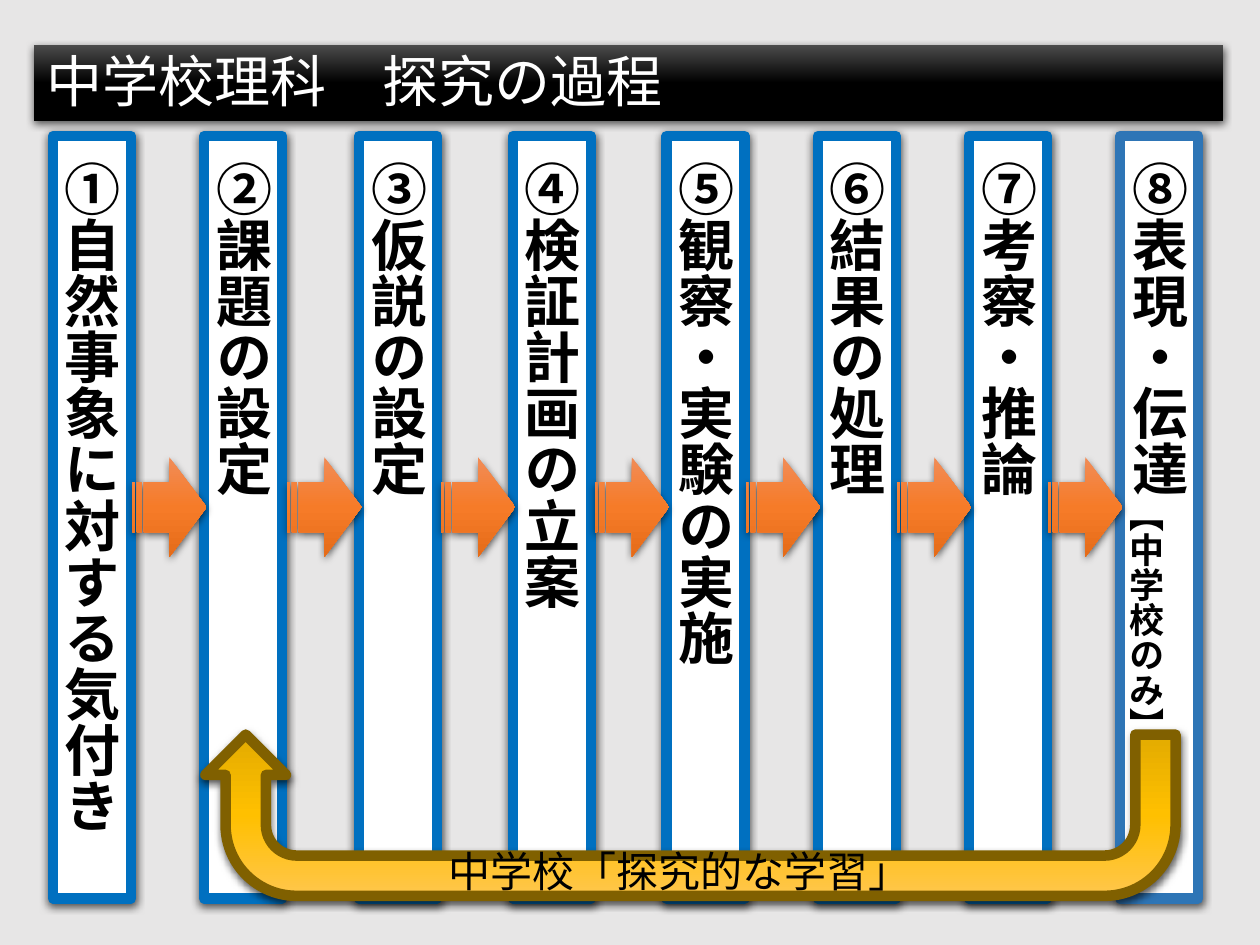
from lxml import etree
from pptx import Presentation
from pptx.dml.color import RGBColor
from pptx.enum.shapes import MSO_SHAPE as Shape
from pptx.enum.text import MSO_ANCHOR as Anchor, MSO_AUTO_SIZE as AutoSize, PP_ALIGN as Align
from pptx.oxml import parse_xml
from pptx.oxml.ns import nsdecls, qn
from pptx.util import Inches, Pt

FONT = "Noto Sans CJK JP"
COLORS = {
    "background": "E7E6E6", "white": "FFFFFF", "black": "000000",
    "border": "0070C0", "last_border": "2E75B6", "loop_border": "806000",
}
TITLE_GRADIENT = ("4B4B4B", "000000", "000000")
ARROW_GRADIENT = ("F18C57", "F67B28", "E56C19")
LOOP_GRADIENT = ("FFC64B", "FFC000", "E3AB00")


def add_run(paragraph, text, size, color="black", bold=False):
    """Add text in the slide's font, for Latin and East Asian letters."""
    run = paragraph.add_run()
    run.text = text
    run.font.name = FONT
    run.font.size = Pt(size)
    run.font.bold = bold
    run.font.color.rgb = RGBColor.from_string(COLORS[color])
    latin = run.font._element.find(qn("a:latin"))
    east_asian = etree.Element(qn("a:ea"), typeface=FONT)
    latin.addnext(east_asian)


def decorate(shape, gradient=None, border=None):
    """Give a shape its fill, border and soft shadow."""
    shape.fill.solid()
    shape.fill.fore_color.rgb = RGBColor.from_string(COLORS["white"])
    if border:
        shape.line.color.rgb = RGBColor.from_string(COLORS[border])
        shape.line.width = Pt(6)
    else:
        shape.line.fill.background()
    properties = shape._element.spPr
    if gradient:
        stops = "".join(
            f'<a:gs pos="{i * 50000}"><a:srgbClr val="{color}"/></a:gs>'
            for i, color in enumerate(gradient))
        solid = properties.find(qn("a:solidFill"))
        properties.replace(solid, parse_xml(
            f'<a:gradFill {nsdecls("a")} rotWithShape="1"><a:gsLst>{stops}</a:gsLst>'
            '<a:lin ang="5400000" scaled="0"/></a:gradFill>'))
    properties.append(parse_xml(
        f'<a:effectLst {nsdecls("a")}><a:outerShdw blurRad="{Pt(4.5)}" dist="{Pt(1.5)}" '
        'dir="5400000" algn="ctr" rotWithShape="0"><a:srgbClr val="000000">'
        '<a:alpha val="63000"/></a:srgbClr></a:outerShdw></a:effectLst>'))


prs = Presentation()
prs.slide_width, prs.slide_height = Inches(10), Inches(7.5)
slide = prs.slides.add_slide(prs.slide_layouts[5])
slide.background.fill.solid()
slide.background.fill.fore_color.rgb = RGBColor.from_string(COLORS["background"])

# Title bar
title = slide.shapes.title
title.left, title.top, title.width, title.height = map(Inches, (0.27, 0.36, 9.44, 0.6))
decorate(title, TITLE_GRADIENT)
title.text_frame.vertical_anchor = Anchor.BOTTOM
title.text_frame.auto_size = AutoSize.NONE
heading = title.text_frame.paragraphs[0]
heading.alignment = Align.LEFT
heading.line_spacing = 0.9
add_run(heading, "中学校理科　探究の過程", 32, "white")

# Steps of the inquiry: left edge, label, smaller remark
steps = [
    (0.42, "①自然事象に対する気付き", ""),
    (1.62, "②課題の設定", ""),
    (2.85, "③仮説の設定", ""),
    (4.07, "④検証計画の立案", ""),
    (5.29, "⑤観察・実験の実施", ""),
    (6.49, "⑥結果の処理", ""),
    (7.69, "⑦考察・推論", ""),
    (8.89, "⑧表現・伝達", "【中学校のみ】"),
]
for left, label, remark in steps:
    step = slide.shapes.add_shape(
        Shape.RECTANGLE, Inches(left), Inches(1.08), Inches(0.62), Inches(6.05))
    decorate(step, border="last_border" if remark else "border")
    frame = step.text_frame
    frame.margin_left, frame.margin_right = 0, Inches(0.08)
    frame.margin_top = frame.margin_bottom = Inches(0.05)
    frame.vertical_anchor = Anchor.TOP
    frame.word_wrap = True
    frame.auto_size = AutoSize.SHAPE_TO_FIT_TEXT
    frame._txBody.bodyPr.set("vert", "eaVert")
    paragraph = frame.paragraphs[0]
    paragraph.alignment = Align.LEFT
    add_run(paragraph, " " + label, 32, bold=True)
    if remark:
        add_run(paragraph, remark, 20, bold=True)

# Arrows leading into each following step
for left, _, _ in steps[1:]:
    arrow = slide.shapes.add_shape(
        Shape.STRIPED_RIGHT_ARROW, Inches(left - 0.57), Inches(3.63), Inches(0.59), Inches(0.79))
    decorate(arrow, ARROW_GRADIENT)

# Loop back from the last step to the second
loop = slide.shapes.add_shape(
    Shape.U_TURN_ARROW, Inches(1.63), Inches(5.83), Inches(7.7), Inches(1.28))
loop.rotation = 180
for i, value in enumerate((0.25, 0.25, 0.25, 0.44, 1)):
    loop.adjustments[i] = value
decorate(loop, LOOP_GRADIENT, "loop_border")

loop_label = slide.shapes.add_textbox(Inches(2.73), Inches(6.66), Inches(5.32), Inches(0.5))
loop_label.text_frame.word_wrap = True
loop_label.text_frame.auto_size = AutoSize.SHAPE_TO_FIT_TEXT
caption = loop_label.text_frame.paragraphs[0]
caption.alignment = Align.CENTER
add_run(caption, "中学校「探究的な学習」", 24)

prs.save("out.pptx")
